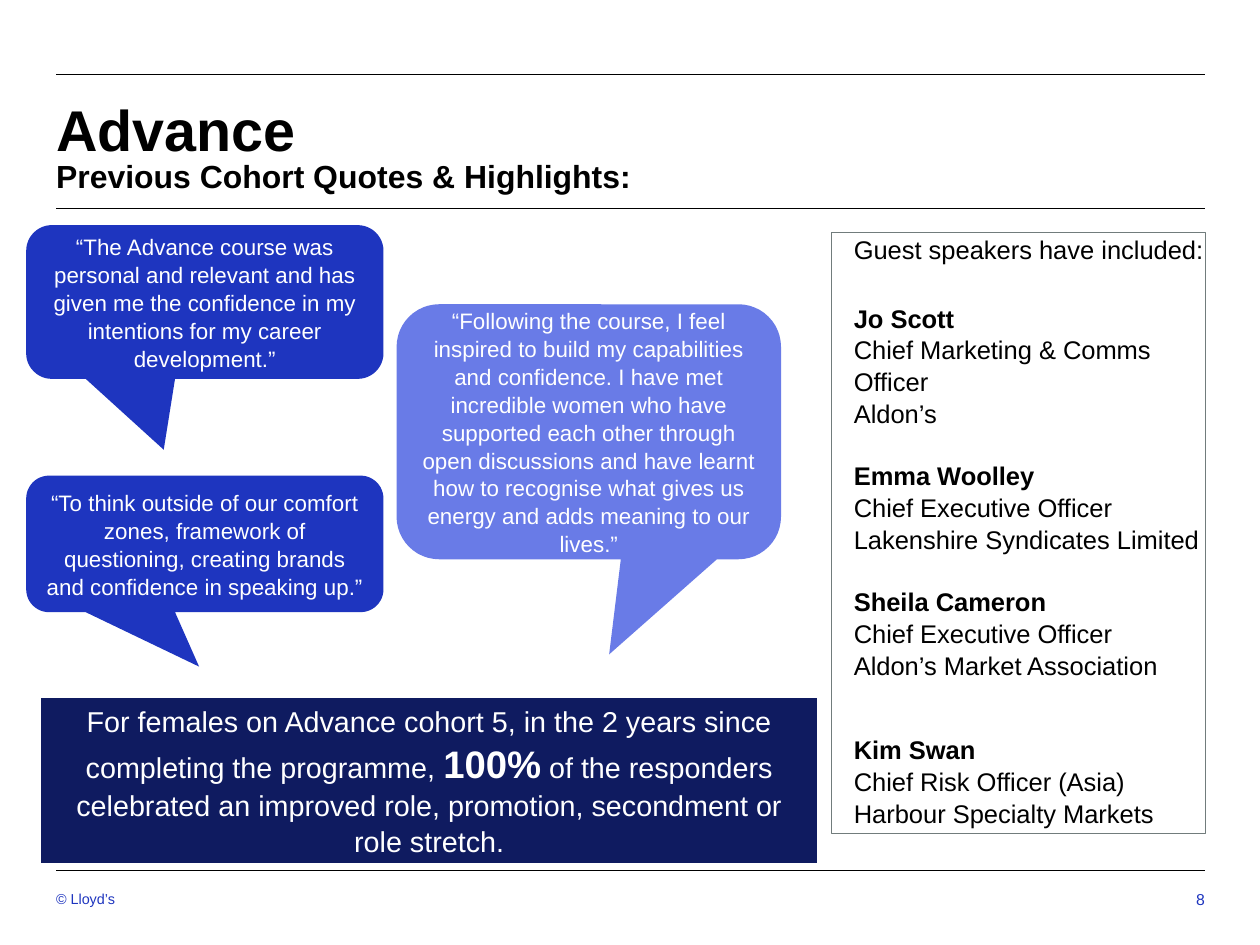
from dataclasses import dataclass
from typing import Any, NamedTuple

from lxml import etree
from pptx import Presentation
from pptx import util as u
from pptx.dml.color import RGBColor
from pptx.enum import shapes, text
from pptx.oxml import ns


@dataclass(frozen=True)
class Theme:
    font: str = "Arial"
    black: str = "000000"
    white: str = "FFFFFF"
    blue: str = "1E35BF"
    light_blue: str = "697BE7"
    navy: str = "0F1B60"
    grey: str = "717C7C"
    title: float = 36
    subtitle: float = 20
    emphasis: float = 24
    banner: float = 18
    panel: float = 16
    quote: float = 14
    page: float = 9.9
    footer: float = 9
    leading: float = 1.04


class Box(NamedTuple):
    left: float
    top: float
    width: float
    height: float

    def lengths(self) -> tuple[u.Length, ...]:
        return tuple(u.Cm(value) for value in self)


class Quote(NamedTuple):
    box: Box
    fill: str
    pointer: tuple[float, float]
    words: str


class Speaker(NamedTuple):
    name: str
    role: str
    company: str
    gap: float = 19


THEME = Theme()
MARGIN, RIGHT = 1.24, 26.64
RULES = (1.65, 4.6, 19.25)
LEFT = text.PP_ALIGN.LEFT
CENTER = text.PP_ALIGN.CENTER
TOP = text.MSO_ANCHOR.TOP
MIDDLE = text.MSO_ANCHOR.MIDDLE
STANDARD_INSETS = (0.25, 0.13, 0.25, 0.13)

QUOTES = (
    Quote(Box(0.58, 4.98, 7.9, 3.4), THEME.blue, (-0.115, 0.961),
          "“The Advance course was personal and relevant and has given me the "
          "confidence in my intentions for my career development.”"),
    Quote(Box(8.77, 6.73, 8.5, 5.64), THEME.light_blue, (0.053, 0.873),
          "“Following the course, I feel inspired to build my capabilities and "
          "confidence. I have met incredible women who have supported each other "
          "through open discussions and have learnt how to recognise what gives "
          "us energy and adds meaning to our lives.”"),
    Quote(Box(0.58, 10.52, 7.9, 3.02), THEME.blue, (-0.016, 0.899),
          "“To think outside of our comfort zones, framework of questioning, "
          "creating brands and confidence in speaking up.”"),
)

SPEAKERS = (
    Speaker("Jo Scott", "Chief Marketing & Comms Officer", "Aldon’s"),
    Speaker("Emma Woolley", "Chief Executive Officer", "Lakenshire Syndicates Limited"),
    Speaker("Sheila Cameron", "Chief Executive Officer", "Aldon’s Market Association"),
    Speaker("Kim Swan", "Chief Risk Officer (Asia)", "Harbour Specialty Markets", 33),
)


def colour(code: str) -> RGBColor:
    return RGBColor.from_string(code)


def set_frame(frame: Any, insets: tuple[float, ...], anchor: Any = TOP) -> None:
    frame.word_wrap = True
    frame.auto_size = text.MSO_AUTO_SIZE.NONE
    frame.vertical_anchor = anchor
    (frame.margin_left, frame.margin_top,
     frame.margin_right, frame.margin_bottom) = (u.Cm(inset) for inset in insets)


def set_paragraph(paragraph: Any, size: float, ink: str, bold: bool = False,
                  align: Any = LEFT, leading: float = THEME.leading,
                  before: float = 0, after: float = 0) -> None:
    paragraph.alignment = align
    paragraph.line_spacing = leading
    paragraph.space_before = u.Pt(before)
    paragraph.space_after = u.Pt(after)
    font = paragraph.font
    font.name, font.size, font.bold = THEME.font, u.Pt(size), bold
    font.color.rgb = colour(ink)


def add_rule(slide: Any, y: float) -> None:
    rule = slide.shapes.add_connector(shapes.MSO_CONNECTOR.STRAIGHT, u.Cm(MARGIN),
                                      u.Cm(y), u.Cm(RIGHT), u.Cm(y))
    rule.line.color.rgb = colour(THEME.black)
    rule.line.width = u.Pt(0.5)
    etree.SubElement(rule._element.spPr, ns.qn("a:effectLst"))


def add_label(slide: Any, box: Box, words: str, size: float, ink: str,
              bold: bool = False, align: Any = LEFT, anchor: Any = MIDDLE) -> None:
    frame = slide.shapes.add_textbox(*box.lengths()).text_frame
    set_frame(frame, (0, 0.1, 0, 0.1), anchor)
    frame.text = words
    set_paragraph(frame.paragraphs[0], size, ink, bold, align)


def add_block(slide: Any, kind: Any, box: Box, fill: str | None = None,
              line: str | None = None, line_width: float = 1) -> Any:
    block = slide.shapes.add_shape(kind, *box.lengths())
    block.shadow.inherit = False
    if fill:
        block.fill.solid()
        block.fill.fore_color.rgb = colour(fill)
    else:
        block.fill.background()
    if line:
        block.line.color.rgb = colour(line)
        block.line.width = u.Pt(line_width)
    else:
        block.line.fill.background()
    return block


def add_title(slide: Any) -> None:
    title = slide.shapes.title
    title.left, title.top, title.width, title.height = Box(
        MARGIN, RULES[0], RIGHT - MARGIN, RULES[1] - RULES[0]).lengths()
    set_frame(title.text_frame, (0, 0.61, 0, 0.2))
    title.text_frame.text = "Advance"
    set_paragraph(title.text_frame.paragraphs[0], THEME.title, THEME.black, True,
                  leading=0.9)


def add_quote(slide: Any, quote: Quote) -> None:
    bubble = add_block(slide, shapes.MSO_SHAPE.ROUNDED_RECTANGULAR_CALLOUT,
                       quote.box, quote.fill)
    for index, value in enumerate((*quote.pointer, 0.167)):
        bubble.adjustments[index] = value
    set_frame(bubble.text_frame, STANDARD_INSETS, MIDDLE)
    bubble.text_frame.text = quote.words
    set_paragraph(bubble.text_frame.paragraphs[0], THEME.quote, THEME.white,
                  align=CENTER)


def add_speakers(slide: Any) -> None:
    panel = add_block(slide, shapes.MSO_SHAPE.RECTANGLE, Box(18.38, 5.15, 8.28, 13.28),
                      line=THEME.grey, line_width=0.75)
    frame = panel.text_frame
    set_frame(frame, (0.5, 0, 0, 0))
    frame.text = "Guest speakers have included:"
    set_paragraph(frame.paragraphs[0], THEME.panel, THEME.black, after=4)
    for speaker in SPEAKERS:
        for words in (speaker.name, speaker.role, speaker.company):
            is_name = words == speaker.name
            paragraph = frame.add_paragraph()
            paragraph.text = words
            set_paragraph(paragraph, THEME.panel, THEME.black, is_name,
                          before=speaker.gap if is_name else 0)


def add_banner(slide: Any) -> None:
    banner = add_block(slide, shapes.MSO_SHAPE.RECTANGLE, Box(0.89, 15.42, 17.2, 3.68),
                       THEME.navy, THEME.white)
    set_frame(banner.text_frame, STANDARD_INSETS, MIDDLE)
    paragraph = banner.text_frame.paragraphs[0]
    set_paragraph(paragraph, THEME.banner, THEME.white, align=CENTER)
    paragraph.add_run().text = ("For females on Advance cohort 5, in the 2 years "
                                "since completing the programme, ")
    share = paragraph.add_run()
    share.text = "100%"
    share.font.size, share.font.bold = u.Pt(THEME.emphasis), True
    paragraph.add_run().text = (" of the responders celebrated an improved role, "
                                "promotion, secondment or role stretch.")


def main() -> None:
    deck = Presentation()
    deck.slide_width, deck.slide_height = u.Cm(27.86), u.Cm(20.9)
    slide = deck.slides.add_slide(deck.slide_layouts[5])
    for y in RULES:
        add_rule(slide, y)
    add_title(slide)
    add_label(slide, Box(MARGIN, 3.33, RIGHT - MARGIN, 1.3),
              "Previous Cohort Quotes & Highlights:", THEME.subtitle, THEME.black,
              bold=True, anchor=TOP)
    add_speakers(slide)
    for quote in QUOTES:
        add_quote(slide, quote)
    add_banner(slide)
    add_label(slide, Box(MARGIN, 19.56, 9.4, 0.64), "© Lloyd’s", THEME.footer, THEME.blue)
    add_label(slide, Box(20.37, 19.51, 6.27, 0.76), "8", THEME.page, THEME.blue,
              align=text.PP_ALIGN.RIGHT)
    deck.save("out.pptx")


if __name__ == "__main__":
    main()
